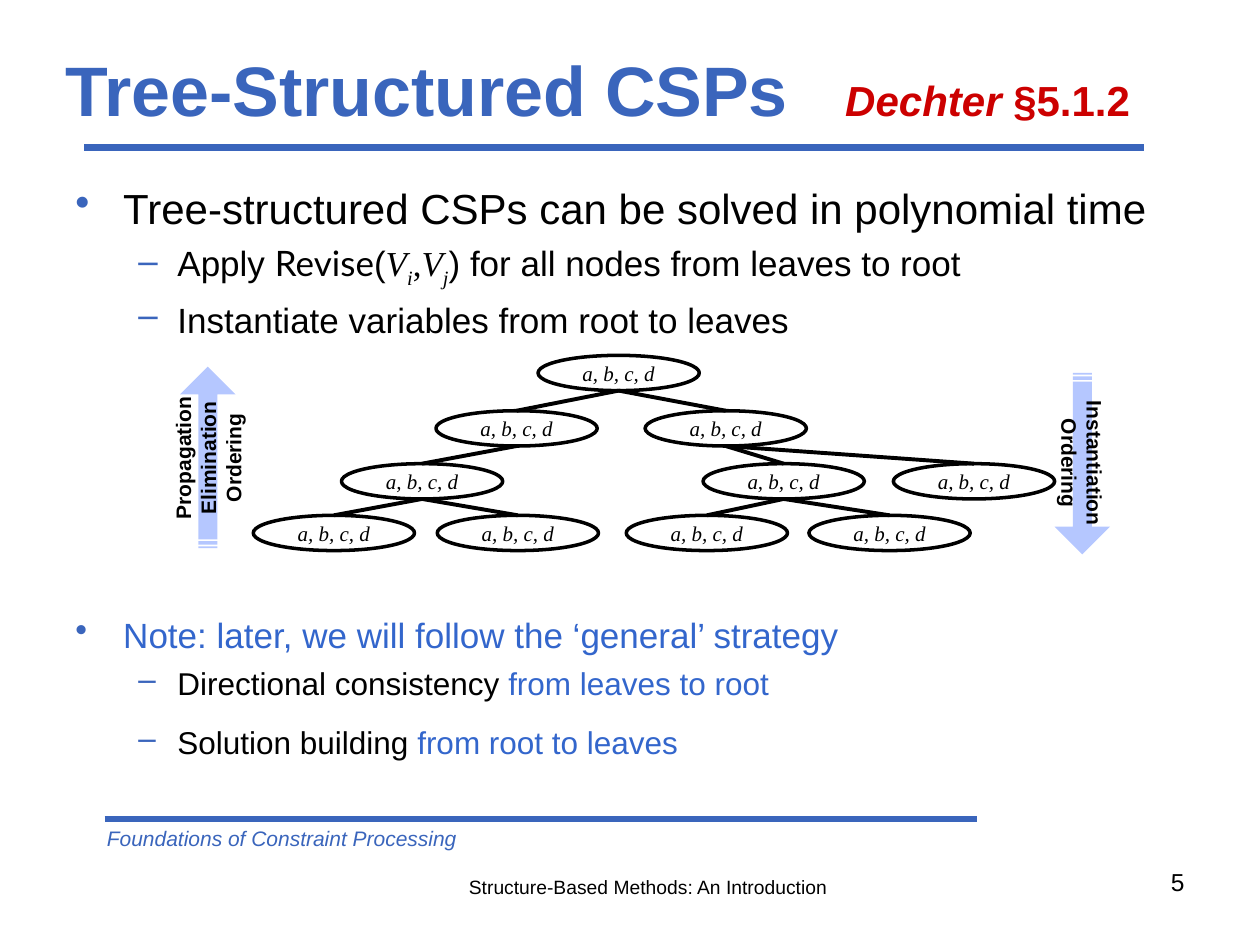
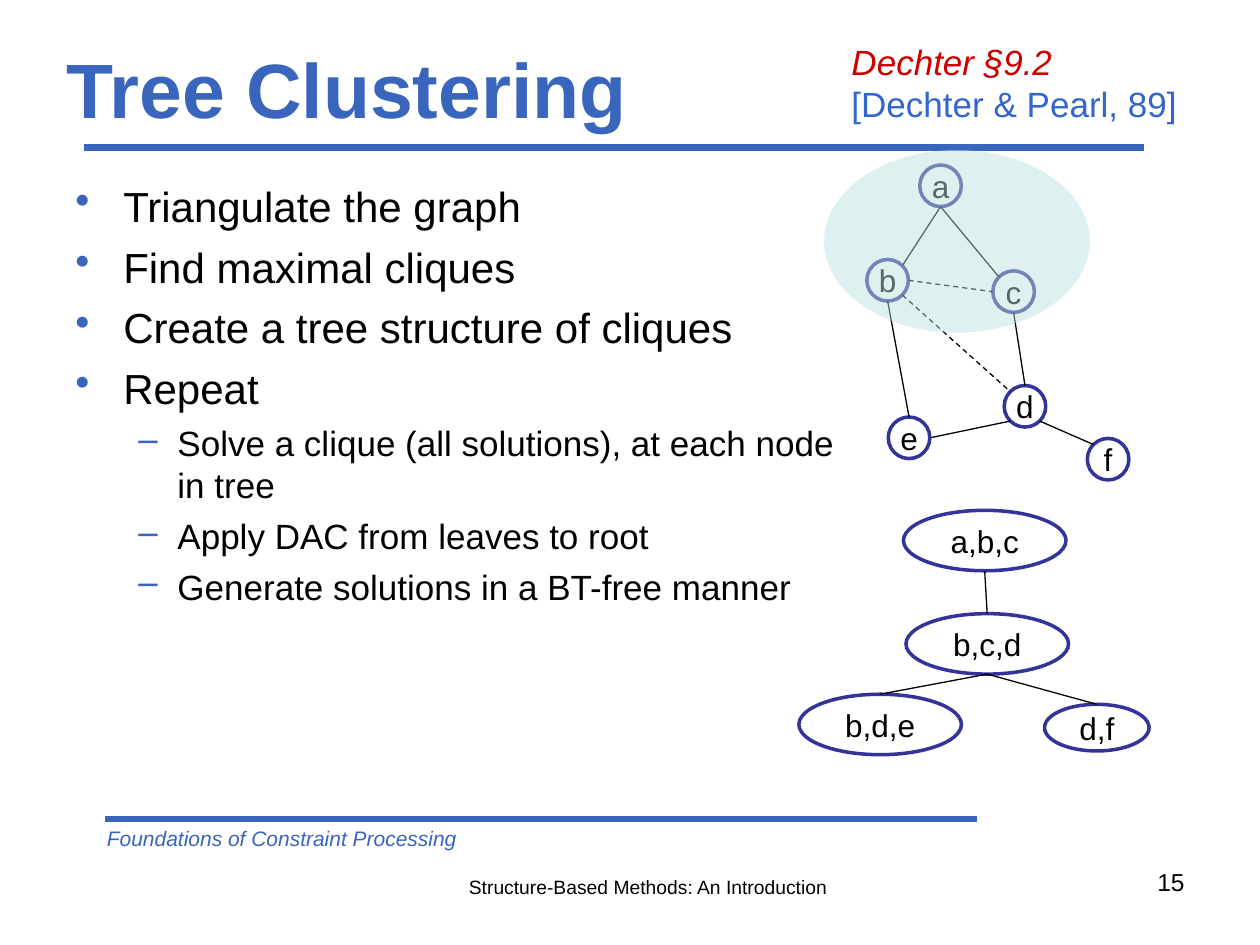
from lxml.etree import SubElement
from pptx import Presentation
from pptx.dml.color import RGBColor
from pptx.enum.dml import MSO_LINE
from pptx.enum.shapes import MSO_CONNECTOR, MSO_SHAPE
from pptx.enum.text import MSO_ANCHOR, PP_ALIGN
from pptx.oxml.ns import qn
from pptx.util import Inches, Pt

BLUE = RGBColor(0x3A, 0x65, 0xBC)
NOTE = RGBColor(0x33, 0x66, 0xCC)
RED = RGBColor(0xCC, 0x00, 0x00)
NAVY = RGBColor(0x33, 0x33, 0x99)
ARROW = RGBColor(0x33, 0x66, 0xFF)
TEAL = RGBColor(0xBB, 0xE0, 0xE3)
BLACK = RGBColor(0, 0, 0)
WHITE = RGBColor(255, 255, 255)

# Content: a paragraph is a string, a list of (text, format) runs,
# or a dict that adds level, space before and size.
RULES = [((0.67, 1.17), (9.08, 1.17)), ((0.83, 6.5), (7.75, 6.5))]
COURSE = "Foundations of Constraint Processing"
TOPIC = "Structure-Based Methods: An Introduction"

MATH = dict(font="Times New Roman", italic=True)
SUB = dict(MATH, base=-25)
NOTED = dict(color=NOTE)

CSP_TITLE = [("Tree-Structured CSPs\t", {}),
             ("Dechter ", dict(size=24, color=RED, italic=True)),
             ("§5.1.2", dict(size=24, color=RED))]
CSP_BODY = [
    dict(text="Tree-structured CSPs can be solved in polynomial time", level=0),
    dict(text=[("Apply ", {}), ("Revise", dict(font="Lato")), ("(", {}),
               ("V", MATH), ("i", SUB), (",", dict(font="Times New Roman")),
               ("V", MATH), ("j", SUB),
               (") for all nodes from leaves to root", {})], level=1),
    dict(text="Instantiate variables from root to leaves", level=1),
    dict(text="Note: later, we will follow the ‘general’ strategy",
         level=0, gap=156, size=20, color=NOTE),
    dict(text=[("Directional consistency", {}),
               (" from leaves to root", NOTED)], level=1, size=18),
    dict(text=[("Solution building", {}),
               (" from root to leaves", NOTED)], level=1, size=18, gap=12),
]
DOMAIN = "a, b, c, d"
ROWS = [2.82, 3.26, 3.68, 4.09]
# name: (left, row, parent)
TREE = {
    "root": (4.27, 0, None),
    "left": (3.46, 1, "root"), "right": (5.12, 1, "root"),
    "inner": (2.71, 2, "left"), "mid": (5.58, 2, "right"),
    "far": (7.09, 2, "right"),
    "leaf1": (2.01, 3, "inner"), "leaf2": (3.47, 3, "inner"),
    "leaf3": (4.97, 3, "mid"), "leaf4": (6.42, 3, "mid"),
}
ARROWS = [((0.93, 3.41), 270, ["Propagation", "Elimination", "Ordering"]),
          ((7.87, 3.46), 90, ["Instantiation", "Ordering"])]

STEPS = [(0, "Triangulate the graph"), (0, "Find maximal cliques"),
         (0, "Create a tree structure of cliques"), (0, "Repeat"),
         (1, "Solve a clique (all solutions), at each node in tree"),
         (1, "Apply DAC from leaves to root"),
         (1, "Generate solutions in a BT-free manner")]
CITED = [[("Dechter §9.2", dict(color=RED, italic=True))],
         "[Dechter & Pearl, 89]"]
GRAPH = {"a": (7.3, 1.31), "b": (6.88, 2.06), "c": (7.88, 2.15),
         "d": (7.97, 3.06), "e": (7.05, 3.31), "f": (8.63, 3.48)}
# (from, side, to, side, dashed)
EDGES = [("a", "S", "b", "NE", False), ("a", "S", "c", "NW", False),
         ("b", "S", "e", "N", False), ("c", "S", "d", "N", False),
         ("d", "SW", "e", "E", False), ("d", "SE", "f", "NW", False),
         ("b", "SE", "d", "NW", True), ("b", "E", "c", "W", True)]
BIG = (1.29, 0.48)
CLIQUES = {"a,b,c": (7.17, 4.05, *BIG), "b,c,d": (7.19, 4.87, *BIG),
           "b,d,e": (6.34, 5.51, *BIG), "d,f": (8.29, 5.59, 0.83, 0.37)}
LINKS = [("a,b,c", "b,c,d"), ("b,c,d", "b,d,e"), ("b,c,d", "d,f")]

# level: (left margin, hang, bullet, size, space before)
LEVELS = [(0.38, -0.38, "•", 24, 6), (0.81, -0.31, "–", 20, 5)]
DIAG = 0.354
SIDES = {"N": (0, -0.5), "S": (0, 0.5), "E": (0.5, 0), "W": (-0.5, 0),
         "NE": (DIAG, -DIAG), "NW": (-DIAG, -DIAG),
         "SE": (DIAG, DIAG), "SW": (-DIAG, DIAG)}


def inch(nums):
    return [Inches(n) for n in nums]


def bullet(para, level):
    left, hang, mark, _, _ = LEVELS[level]
    prop = para._p.get_or_add_pPr()
    prop.set("marL", str(Inches(left)))
    prop.set("indent", str(Inches(hang)))
    tone = SubElement(prop, qn("a:buClr"))
    SubElement(tone, qn("a:srgbClr")).set("val", str(BLUE))
    SubElement(prop, qn("a:buChar")).set("char", mark)


def add_run(para, text, size=18, font="Arial", color=BLACK, bold=False,
            italic=False, base=0):
    run = para.add_run()
    run.text = text
    face = run.font
    face.size, face.name, face.bold, face.italic = Pt(size), font, bold, italic
    face.color.rgb = color
    if base:
        run._r.get_or_add_rPr().set("baseline", str(base * 1000))


def write(shape, paras, align=PP_ALIGN.LEFT, anchor=MSO_ANCHOR.TOP,
          wrap=True, inset=None, tab=None, **look):
    """Fill a shape with paragraphs; look is the default run format."""
    frame = shape.text_frame
    frame.word_wrap, frame.vertical_anchor = wrap, anchor
    if inset is not None:
        frame.margin_left = frame.margin_right = Inches(inset)
        frame.margin_top = frame.margin_bottom = Inches(inset)
    for num, item in enumerate(paras):
        para = frame.add_paragraph() if num else frame.paragraphs[0]
        para.alignment = align
        style, text = dict(look), item
        if isinstance(item, dict):
            style.update(item)
            text, level = style.pop("text"), style.pop("level")
            bullet(para, level)
            size, gap = LEVELS[level][3:]
            style.setdefault("size", size)
            gap = style.pop("gap", gap)
            if num:
                para.space_before = Pt(gap)
        if tab:
            stops = SubElement(para._p.get_or_add_pPr(), qn("a:tabLst"))
            stop = SubElement(stops, qn("a:tab"))
            stop.set("pos", str(Inches(tab)))
            stop.set("algn", "l")
        runs = [(text, {})] if isinstance(text, str) else text
        for part, extra in runs:
            add_run(para, part, **{**style, **extra})


def put(slide, box, paras, **form):
    write(slide.shapes.add_textbox(*inch(box)), paras, **form)


def draw(slide, kind, box, fill=None, line=None, alpha=None):
    shape = slide.shapes.add_shape(kind, *inch(box))
    shape.shadow.inherit = False
    if fill is None:
        shape.fill.background()
    else:
        shape.fill.solid()
        shape.fill.fore_color.rgb = fill
        if alpha:
            tone = shape._element.spPr.find(".//" + qn("a:srgbClr"))
            SubElement(tone, qn("a:alpha")).set("val", str(alpha * 1000))
    if line is None:
        shape.line.fill.background()
    else:
        shape.line.color.rgb = line
        shape.line.width = Pt(2)
    return shape


def node(slide, box, text, **form):
    shape = draw(slide, MSO_SHAPE.OVAL, box, form.pop("fill", None),
                 form.pop("line", BLACK))
    write(shape, [text], align=PP_ALIGN.CENTER, anchor=MSO_ANCHOR.MIDDLE,
          wrap=False, inset=0, **form)
    return shape


def stroke(slide, start, end, color=BLACK, width=0.75, dashed=False):
    link = slide.shapes.add_connector(MSO_CONNECTOR.STRAIGHT, *start, *end)
    link.line.color.rgb = color
    link.line.width = Pt(width)
    if dashed:
        link.line.dash_style = MSO_LINE.DASH
    SubElement(link._element.spPr, qn("a:effectLst"))
    return link


def spot(shape, side):
    """Point on an ellipse's rim."""
    across, down = SIDES[side]
    return (int(shape.left + shape.width * (0.5 + across)),
            int(shape.top + shape.height * (0.5 + down)))


def join(slide, start, end, out="S", into="N", **form):
    link = stroke(slide, spot(start, out), spot(end, into), **form)
    if out == "N":
        link.begin_connect(start, 0)
    if into == "N":
        link.end_connect(end, 0)


def base(deck, title, size, spot_at, number, **form):
    """Slide with the shared rules, footer, title and page number."""
    slide = deck.slides.add_slide(deck.slide_layouts[6])
    for start, end in RULES:
        stroke(slide, inch(start), inch(end), color=BLUE, width=4)
    put(slide, (0.75, 6.5, 5.25, 0.3), [COURSE], size=12, color=BLUE,
        italic=True)
    put(slide, (3.57, 6.9, 3.15, 0.29), [TOPIC], size=11,
        align=PP_ALIGN.CENTER)
    put(slide, (*spot_at, 9, 0.75), [title], size=size, color=BLUE,
        bold=True, anchor=MSO_ANCHOR.MIDDLE, **form)
    put(slide, (7.17, 6.83, 2.33, 0.52), [str(number)], size=14,
        align=PP_ALIGN.RIGHT)
    return slide


def csp_slide(deck):
    slide = base(deck, CSP_TITLE, 40, (0.42, 0.33), 5, tab=6.19)
    put(slide, (0.5, 1.4, 9, 4.95), CSP_BODY)
    nodes = {name: node(slide, (left, ROWS[row], 1.28, 0.28), DOMAIN,
                        size=12, **MATH)
             for name, (left, row, _) in TREE.items()}
    for name, (_, _, above) in TREE.items():
        if above:
            join(slide, nodes[above], nodes[name], width=2.25)
    for place, turn, words in ARROWS:
        arrow = draw(slide, MSO_SHAPE.STRIPED_RIGHT_ARROW,
                     (*place, 1.44, 0.44), ARROW, alpha=36)
        arrow.adjustments[0], arrow.adjustments[1] = 0.344, 0.5
        arrow.rotation = turn
        write(arrow, words, align=PP_ALIGN.CENTER, anchor=MSO_ANCHOR.MIDDLE,
              wrap=False, size=12, bold=True)


def cluster_slide(deck):
    slide = base(deck, "Tree Clustering", 44, (0.43, 0.32), 15)
    put(slide, (0.5, 1.38, 6.28, 4.95),
        [dict(text=text, level=level) for level, text in STEPS])
    put(slide, (6.66, 0.27, 3.03, 0.77), CITED, size=20, color=NOTE)
    look = dict(fill=WHITE, line=NAVY)
    dots = {name: node(slide, (*place, 0.33, 0.33), name, **look)
            for name, place in GRAPH.items()}
    for start, out, end, into, dashed in EDGES:
        join(slide, dots[start], dots[end], out, into, dashed=dashed)
    draw(slide, MSO_SHAPE.OVAL, (6.54, 1.19, 2.11, 1.45), TEAL, alpha=47)
    groups = {name: node(slide, box, name, **look)
              for name, box in CLIQUES.items()}
    for start, end in LINKS:
        join(slide, groups[start], groups[end])


def main():
    deck = Presentation()
    deck.slide_width, deck.slide_height = Inches(10), Inches(7.5)
    csp_slide(deck)
    cluster_slide(deck)
    deck.save("out.pptx")


if __name__ == "__main__":
    main()
